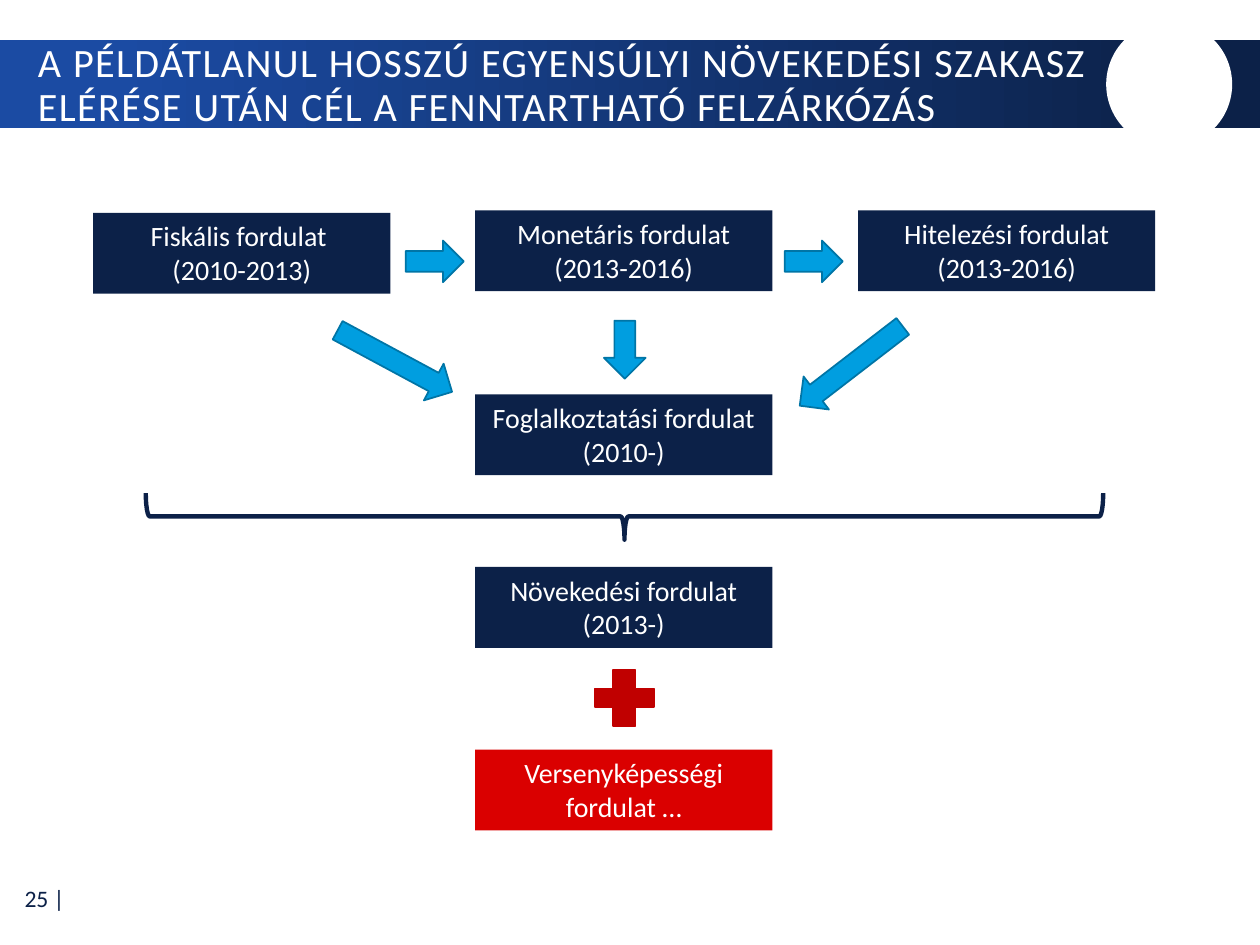
from pptx import Presentation
from pptx.dml.color import RGBColor
from pptx.enum.shapes import MSO_SHAPE
from pptx.enum.text import MSO_ANCHOR, MSO_AUTO_SIZE, PP_ALIGN
from pptx.util import Cm, Pt

RECTANGLE = MSO_SHAPE.RECTANGLE
OVAL = MSO_SHAPE.OVAL
ARROW = MSO_SHAPE.RIGHT_ARROW
BRACE = MSO_SHAPE.LEFT_BRACE
PLUS = MSO_SHAPE.CROSS
LEFT, CENTER, RIGHT = PP_ALIGN.LEFT, PP_ALIGN.CENTER, PP_ALIGN.RIGHT
TOP, MIDDLE = MSO_ANCHOR.TOP, MSO_ANCHOR.MIDDLE
GROW = MSO_AUTO_SIZE.SHAPE_TO_FIT_TEXT

COLORS = {
    "navy": "0C2148",
    "royal": "1B4BA3",
    "white": "FFFFFF",
    "red": "DA0000",
    "sky": "009EE0",
    "sky_edge": "0075A6",
    "plus": "C00000",
}
TITLE = ("A PÉLDÁTLANUL HOSSZÚ EGYENSÚLYI NÖVEKEDÉSI SZAKASZ "
         "ELÉRÉSE UTÁN CÉL A FENNTARTHATÓ FELZÁRKÓZÁS")
BOX_SIZE = (5.99, 1.63)
COLUMNS = (1.88, 9.58, 17.3)
STEPS = [
    (COLUMNS[0], 4.29, "navy", ["Fiskális fordulat ", "(2010-2013)"]),
    (COLUMNS[1], 4.24, "navy", ["Monetáris fordulat (2013-2016)"]),
    (COLUMNS[2], 4.24, "navy", ["Hitelezési fordulat (2013-2016)"]),
    (COLUMNS[1], 7.95, "navy", ["Foglalkoztatási fordulat (2010-)"]),
    (COLUMNS[1], 11.43, "navy", ["Növekedési fordulat (2013-)"]),
    (COLUMNS[1], 15.11, "red", ["Versenyképességi fordulat …"]),
]
ARROW_HEIGHT = 0.84
SHORT, LONG = 1.17, 2.62
ARROWS = [
    (8.18, 4.85, SHORT, 0),
    (15.82, 4.85, SHORT, 0),
    (12.01, 6.63, SHORT, 90),
    (6.65, 6.86, LONG, 28.3),
    (15.85, 6.96, LONG, 142.4),
]


def color(name):
    """Return the named colour."""
    return RGBColor.from_string(COLORS[name])


def set_values(target, values):
    """Set each named attribute on the target."""
    for name, value in values.items():
        setattr(target, name, value)


def write_text(box, lines, size, tint, align, anchor):
    """Fill a box with formatted paragraphs."""
    frame = box.text_frame
    set_values(frame, {"text": "\n".join(lines), "word_wrap": True,
                       "vertical_anchor": anchor})
    for para in frame.paragraphs:
        para.alignment = align
        for span in para.runs:
            set_values(span.font, {"name": "Calibri", "size": Pt(size)})
            span.font.color.rgb = color(tint)


def add_figure(page, kind, place, fill=None, line=None, width=1, rotation=0):
    """Add a preset shape with plain fill and line."""
    shape = page.shapes.add_shape(kind, *map(Cm, place))
    shape.shadow.inherit = False
    shape.rotation = rotation
    if fill:
        shape.fill.solid()
        shape.fill.fore_color.rgb = color(fill)
    else:
        shape.fill.background()
    if line:
        shape.line.color.rgb = color(line)
        shape.line.width = Pt(width)
    else:
        shape.line.fill.background()
    return shape


def add_banner(page):
    """Add the gradient band with its round cut-out."""
    band = add_figure(page, RECTANGLE, (0, 0.81, 25.4, 1.78))
    band.fill.gradient()
    band.fill.gradient_angle = 0
    stops = zip(band.fill.gradient_stops, (("royal", 0.09), ("navy", 0.95)))
    for stop, (name, position) in stops:
        stop.color.rgb = color(name)
        stop.position = position
    add_figure(page, OVAL, (22.3, 0.43, 2.54, 2.54), "white")


def add_title(page):
    """Format the title and bring it in front of the band."""
    title = page.shapes.title
    places = (0.51, 0.89, 22.05, 1.7)
    set_values(title, dict(zip(("left", "top", "width", "height"),
                               map(Cm, places))))
    write_text(title, [TITLE], 23, "white", LEFT, MIDDLE)
    title.text_frame.auto_size = MSO_AUTO_SIZE.NONE
    para = title.text_frame.paragraphs[0]
    para.line_spacing = 0.9
    para.runs[0].font._element.set("spc", "80")
    page.shapes.element.append(title.element)


def add_step(page, left, top, fill, lines):
    """Add one labelled box of the flow."""
    box = add_figure(page, RECTANGLE, (left, top, *BOX_SIZE), fill)
    write_text(box, lines, 16, "white", CENTER, TOP)
    box.text_frame.auto_size = GROW


def add_page_number(page):
    """Add the page number at the lower left."""
    box = page.shapes.add_textbox(*map(Cm, (0.03, 17.63, 1.52, 0.94)))
    write_text(box, ["25 |"], 13.5, "navy", RIGHT, MIDDLE)


def main():
    """Build and save the slide."""
    deck = Presentation()
    set_values(deck, {"slide_width": Cm(25.4), "slide_height": Cm(19.05)})
    page = deck.slides.add_slide(deck.slide_layouts[5])
    add_page_number(page)
    add_banner(page)
    add_title(page)
    for step in STEPS:
        add_step(page, *step)
    for left, top, width, rotation in ARROWS:
        add_figure(page, ARROW, (left, top, width, ARROW_HEIGHT),
                   "sky", "sky_edge", rotation=rotation)
    add_figure(page, BRACE, (12.12, 0.76, 0.94, 19.3),
               line="navy", width=2.5, rotation=270)
    plus = add_figure(page, PLUS, (11.99, 13.51, 1.19, 1.12), "plus", "plus")
    plus.adjustments[0] = 0.33
    deck.save("out.pptx")


if __name__ == "__main__":
    main()
